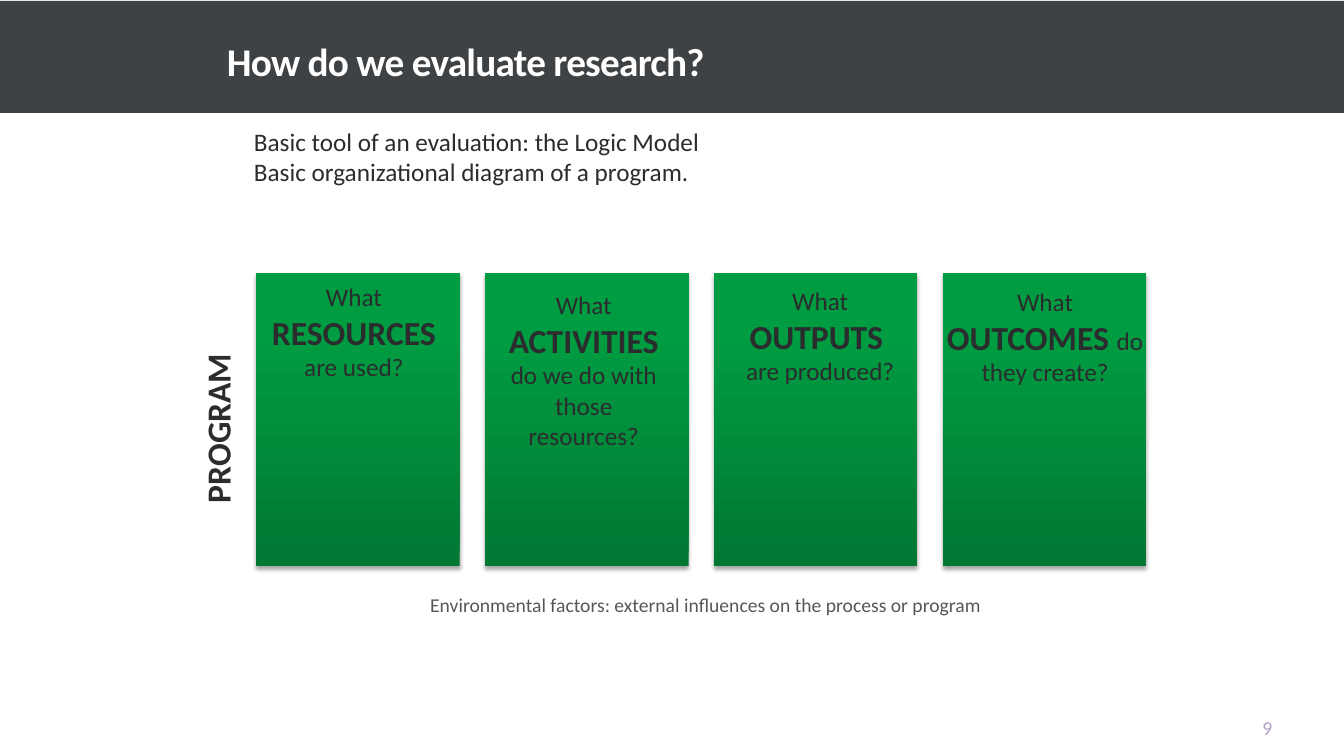
from lxml import etree
from pptx import Presentation
from pptx.dml.color import RGBColor
from pptx.enum.shapes import MSO_SHAPE
from pptx.enum.text import MSO_ANCHOR, PP_ALIGN
from pptx.oxml import parse_xml
from pptx.oxml.ns import nsdecls
from pptx.util import Inches, Pt

RECTANGLE = MSO_SHAPE.RECTANGLE
TOP, BOTTOM = MSO_ANCHOR.TOP, MSO_ANCHOR.BOTTOM
LEFT, CENTER, RIGHT = PP_ALIGN.LEFT, PP_ALIGN.CENTER, PP_ALIGN.RIGHT

CHARCOAL = RGBColor(0x3F, 0x42, 0x44)
WHITE = RGBColor(0xFF, 0xFF, 0xFF)
INK = RGBColor(0x2A, 0x2C, 0x2D)
GRAY = RGBColor(0x54, 0x58, 0x5A)
LILAC = RGBColor(0xB0, 0xA2, 0xC5)
BLACK = RGBColor(0x00, 0x00, 0x00)
GREEN_STOPS = [
    (0, RGBColor(0x00, 0x78, 0x33)),
    (80, RGBColor(0x00, 0x9C, 0x42)),
    (100, RGBColor(0x00, 0x9D, 0x42)),
]

FONT = "Calibri"
COLUMN_LEFT, COLUMN_STEP = 2.54, 2.27

QUESTIONS = [
    ((2.54, 2.74, 1.94, 1.11), "RESOURCES", "are used?", True),
    ((4.91, 2.82, 1.76, 1.72), "ACTIVITIES ", "do we do with those resources?", False),
    ((7.17, 2.78, 1.93, 1.11), "OUTPUTS ", "are produced?", True),
    ((9.29, 2.79, 2.15, 1.11), "OUTCOMES ", "do they create?", False),
]


def add_rectangle(page, area):
    shape = page.shapes.add_shape(RECTANGLE, *map(Inches, area))
    shape.shadow.inherit = False
    shape.line.fill.background()
    return shape


def add_title_bar(page):
    bar = add_rectangle(page, (0, 0.01, 13.33, 1.11))
    bar.fill.solid()
    bar.fill.fore_color.rgb = CHARCOAL


def add_column(page, left):
    column = add_rectangle(page, (left, 2.71, 2.02, 2.91))
    stops = "".join(
        f'<a:gs pos="{position * 1000}"><a:srgbClr val="{color}"/></a:gs>'
        for position, color in GREEN_STOPS
    )
    gradient = parse_xml(
        f'<a:gradFill {nsdecls("a")} rotWithShape="1"><a:gsLst>{stops}</a:gsLst>'
        '<a:lin ang="16200000" scaled="0"/></a:gradFill>'
    )
    properties = column._element.spPr
    properties.find("{*}prstGeom").addnext(gradient)
    effects = properties.find("{*}effectLst")
    namespace = etree.QName(effects).namespace
    shadow = etree.SubElement(
        effects, f"{{{namespace}}}outerShdw",
        blurRad=str(Pt(3.1)), dist=str(Pt(1.8)), dir="5400000", rotWithShape="0",
    )
    color = etree.SubElement(shadow, f"{{{namespace}}}srgbClr", val=str(BLACK))
    etree.SubElement(color, f"{{{namespace}}}alpha", val="35000")


def add_text(page, area, lines, size, color, align=LEFT, bold=False,
             anchor=TOP, margins=(0.1, 0.05, 0.1, 0.05), wrap=True):
    box = page.shapes.add_textbox(*map(Inches, area))
    frame = box.text_frame
    frame.word_wrap = wrap
    frame.vertical_anchor = anchor
    (frame.margin_left, frame.margin_top,
     frame.margin_right, frame.margin_bottom) = map(Inches, margins)
    for index, line in enumerate(lines):
        para = frame.add_paragraph() if index else frame.paragraphs[0]
        para.alignment = align
        para.font.name = FONT
        para.font.size = Pt(size)
        para.font.bold = bold
        para.font.color.rgb = color
        para.add_run().text = line
    return box


def add_title(page, text):
    box = add_text(page, (2.25, -0.56, 8.62, 1.45), [text], 28, WHITE,
                   bold=True, anchor=BOTTOM, margins=(0, 0, 0.1, 0.05))
    para = box.text_frame.paragraphs[0]
    para.line_spacing = 0.85
    para.runs[0].font._element.set("spc", "-50")


def add_question(page, area, keyword, ending, ending_on_new_line):
    lines = ["What ", ending] if ending_on_new_line else ["What "]
    box = add_text(page, area, lines, 18, INK, CENTER)
    para = box.text_frame.paragraphs[0]
    span = para.add_run()
    span.text = keyword
    span.font.size = Pt(24)
    span.font.bold = True
    if not ending_on_new_line:
        para.add_run().text = ending


def main():
    deck = Presentation()
    deck.slide_width, deck.slide_height = Inches(13.33), Inches(7.5)
    page = deck.slides.add_slide(deck.slide_layouts[6])

    add_title_bar(page)
    add_title(page, "How do we evaluate research?")
    add_text(page, (2.42, 1.2, 7.7, 0.71),
             ["Basic tool of an evaluation: the Logic Model",
              "Basic organizational diagram of a program."], 18, INK)

    for index in range(len(QUESTIONS)):
        add_column(page, COLUMN_LEFT + index * COLUMN_STEP)
    for question in QUESTIONS:
        add_question(page, *question)

    add_text(page, (1.67, 5.83, 10.66, 0.34),
             ["Environmental factors: external influences on the process or program"],
             14, GRAY, CENTER)
    program = add_text(page, (0.41, 4, 3.49, 0.5), ["PROGRAM"], 24, INK, CENTER, bold=True)
    program.rotation = 270
    add_text(page, (12.11, 7.09, 0.51, 0.25), ["9"], 14, LILAC, RIGHT,
             anchor=BOTTOM, margins=(0, 0, 0, 0), wrap=False)

    deck.save("out.pptx")


if __name__ == "__main__":
    main()
